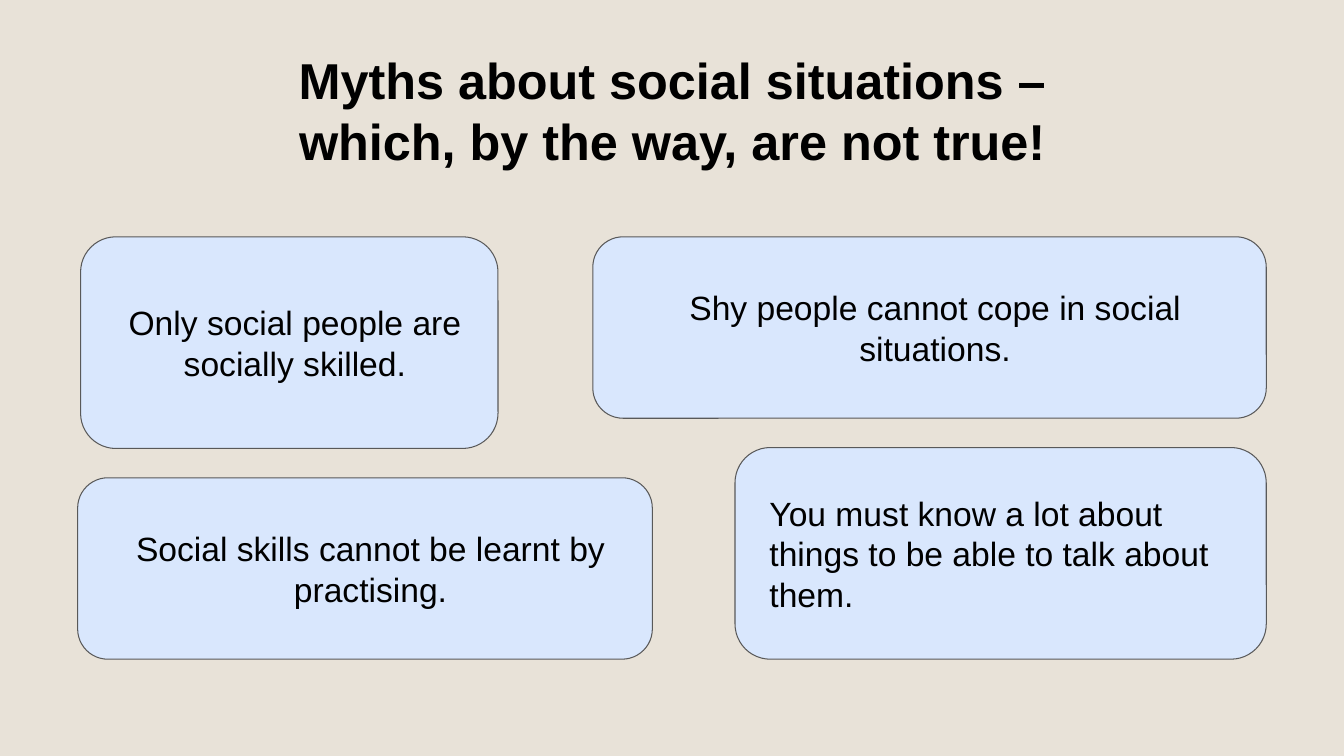
from pptx import Presentation
from pptx.dml.color import RGBColor
from pptx.enum.shapes import MSO_SHAPE
from pptx.enum.text import MSO_ANCHOR, PP_ALIGN
from pptx.util import Inches, Pt

SLIDE_WIDTH, SLIDE_HEIGHT = Inches(13.33), Inches(7.5)
SAND = RGBColor(0xE8, 0xE2, 0xD8)
PALE_BLUE = RGBColor(0xD9, 0xE7, 0xFD)
GREY = RGBColor(0x59, 0x59, 0x59)
BLACK = RGBColor(0, 0, 0)
FONT = "Arial"
INSET = Inches(0.13)
INDENT = Inches(0.11)
ROUNDED = MSO_SHAPE.ROUNDED_RECTANGLE
TOP, MIDDLE = MSO_ANCHOR.TOP, MSO_ANCHOR.MIDDLE
LEFT, CENTER = PP_ALIGN.LEFT, PP_ALIGN.CENTER

# Percentages of the slide's width and height
MARGIN = 5.78
RIGHT_EDGE = 100 - MARGIN
CARDS_TOP, CARDS_BOTTOM = 31.33, 87.2
SHORT, TALL = 24, 28


def area(left, top, width, height):
    """Turn percentages of the slide into lengths."""
    return (int(SLIDE_WIDTH * left / 100), int(SLIDE_HEIGHT * top / 100),
            int(SLIDE_WIDTH * width / 100), int(SLIDE_HEIGHT * height / 100))


def write_text(box, text, size, align, anchor, bold=False, indent=0):
    frame = box.text_frame
    frame.word_wrap = True
    frame.vertical_anchor = anchor
    frame.margin_left = frame.margin_right = INSET
    frame.margin_top = frame.margin_bottom = INSET
    frame.text = text
    for para in frame.paragraphs:
        para.alignment = align
        properties = para._p.get_or_add_pPr()
        properties.set("marL", str(indent))
        properties.set("indent", "0")
        for span in para.runs:
            span.font.name = FONT
            span.font.size = Pt(size)
            span.font.bold = bold
            span.font.color.rgb = BLACK


def add_title(page, text):
    box = page.shapes.add_textbox(*area(11.18, 4.8, 77.72, 19.73))
    write_text(box, text, 36, CENTER, TOP, bold=True)


def add_myth(page, text, left, top, width, height, align=CENTER):
    card = page.shapes.add_shape(ROUNDED, *area(left, top, width, height))
    card.shadow.inherit = False
    card.fill.solid()
    card.fill.fore_color.rgb = PALE_BLUE
    card.line.color.rgb = GREY
    card.line.width = Pt(0.75)
    write_text(card, text, 24, align, MIDDLE, indent=INDENT)


def main():
    deck = Presentation()
    deck.slide_width, deck.slide_height = SLIDE_WIDTH, SLIDE_HEIGHT
    page = deck.slides.add_slide(deck.slide_layouts[6])
    page.background.fill.solid()
    page.background.fill.fore_color.rgb = SAND

    add_title(page, "Myths about social situations –\n"
                    "which, by the way, are not true!")
    add_myth(page, "Only social people are socially skilled.",
             6, CARDS_TOP, 31.06, TALL)
    add_myth(page, "Shy people cannot cope in social situations.",
             RIGHT_EDGE - 50.11, CARDS_TOP, 50.11, SHORT)
    add_myth(page, "Social skills cannot be learnt by practising.",
             MARGIN, CARDS_BOTTOM - SHORT, 42.76, SHORT)
    add_myth(page, "You must know a lot about things to be able to talk about them.",
             RIGHT_EDGE - 39.53, CARDS_BOTTOM - TALL, 39.53, TALL, LEFT)
    deck.save("out.pptx")


if __name__ == "__main__":
    main()
